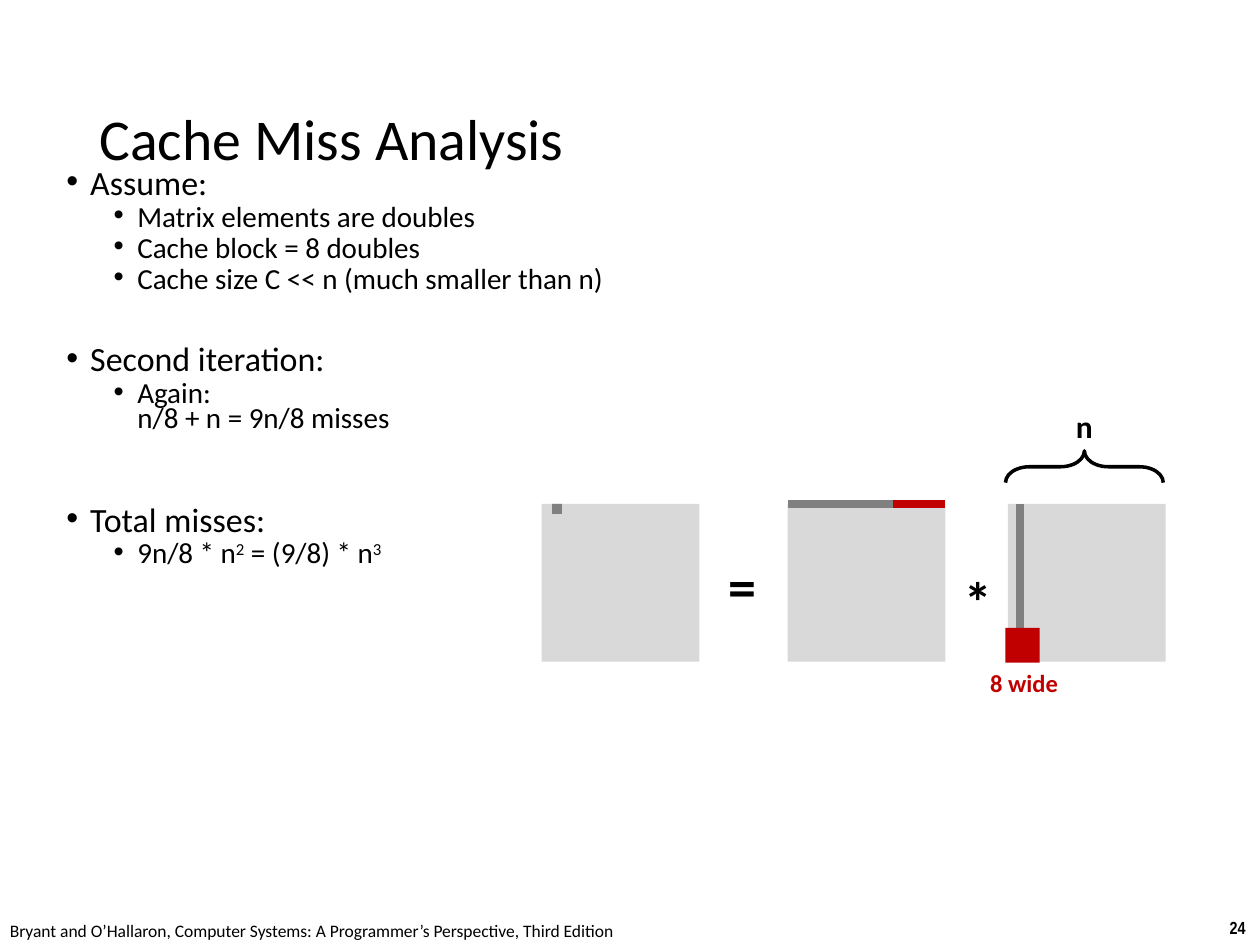
from dataclasses import dataclass

from lxml import etree
from pptx import Presentation
from pptx.dml.color import RGBColor
from pptx.enum.shapes import MSO_CONNECTOR, MSO_SHAPE
from pptx.enum.text import MSO_ANCHOR, MSO_AUTO_SIZE, PP_ALIGN
from pptx.oxml.ns import qn
from pptx.util import Cm, Pt

RECTANGLE = MSO_SHAPE.RECTANGLE
LEFT_BRACE = MSO_SHAPE.LEFT_BRACE
STRAIGHT = MSO_CONNECTOR.STRAIGHT
FIT_SHAPE = MSO_AUTO_SIZE.SHAPE_TO_FIT_TEXT
NO_FIT = MSO_AUTO_SIZE.NONE
MIDDLE = MSO_ANCHOR.MIDDLE
LEFT = PP_ALIGN.LEFT

COLORS = {"text": "000000", "matrix": "D9D9D9", "used": "808080", "cached": "C00000"}
FONT = "Calibri"
SIDE = 3.18
TOP = 10.16
RESULT_X, ROW_X, COLUMN_X = 10.92, 15.88, 20.32
COLUMN_LINE_X = 20.57
LEVEL_SIZES = (19.4, 16.6)
LEVEL_SPACING = (7.5, 3.8)
LEVEL_INDENTS = (0.48, 1.43)


@dataclass
class Bullet:
    text: str
    level: int = 1
    space_before: float | None = None


@dataclass
class Label:
    text: str
    left: float
    top: float
    width: float
    height: float
    size: float
    color: str = "text"
    bold: bool = True
    font: str = FONT


@dataclass
class Block:
    left: float
    top: float
    width: float
    height: float
    color: str


@dataclass
class Stripe:
    x1: float
    y1: float
    x2: float
    y2: float
    color: str


BULLETS = [
    Bullet("Assume:", 0),
    Bullet("Matrix elements are doubles"),
    Bullet("Cache block = 8 doubles"),
    Bullet("Cache size C << n (much smaller than n)"),
    Bullet("Second iteration:", 0, 31.5),
    Bullet("Again:\vn/8 + n = 9n/8 misses"),
    Bullet("Total misses:", 0, 43.5),
    Bullet("9n/8 * n^2^ = (9/8) * n^3"),
]
MATRICES = [Block(x, TOP, SIDE, SIDE, "matrix") for x in (RESULT_X, ROW_X, COLUMN_X)]
STRIPES = [
    Stripe(ROW_X, TOP, ROW_X + SIDE, TOP, "used"),
    Stripe(COLUMN_LINE_X, TOP, COLUMN_LINE_X, TOP + SIDE, "used"),
    Stripe(ROW_X + SIDE * 2 / 3, TOP, ROW_X + SIDE, TOP, "cached"),
]
CACHE_BLOCKS = [
    Block(11.13, TOP, 0.2, 0.2, "used"),
    Block(20.27, 12.66, 0.69, 0.7, "cached"),
]
LABELS = [
    Label("24", 24.54, 18.36, 0.86, 0.69, 10, font="Arial Narrow"),
    Label(
        "Bryant and O’Hallaron, Computer Systems: A Programmer’s Perspective, Third Edition",
        -0.05, 18.42, 12.9, 0.69, 10, bold=False,
    ),
    Label("n", 21.44, 8.08, 0.86, 1.02, 18),
    Label("*", 19.18, 11.3, 1.09, 1.63, 32),
    Label("=", 14.43, 11, 1.09, 1.63, 32),
    Label("8 wide", 19.71, 13.34, 1.88, 0.86, 14, "cached"),
]


def rgb(name: str) -> RGBColor:
    return RGBColor.from_string(COLORS[name])


def style_font(paragraph, size: float, color: str = "text", bold: bool = False, font: str = FONT) -> None:
    paragraph.font.name = font
    paragraph.font.size = Pt(size)
    paragraph.font.bold = bold
    paragraph.font.color.rgb = rgb(color)


def add_title(slide, text: str) -> None:
    title = slide.shapes.title
    title.left, title.top, title.width, title.height = Cm(1.75), Cm(1.02), Cm(21.9), Cm(3.68)
    frame = title.text_frame
    frame.text = text
    frame.auto_size = NO_FIT
    frame.vertical_anchor = MIDDLE
    heading = frame.paragraphs[0]
    heading.alignment = LEFT
    heading.line_spacing = 0.9
    style_font(heading, 33)


def add_bullet(paragraph, bullet: Bullet) -> None:
    level = bullet.level
    paragraph.level = level
    paragraph.line_spacing = 0.7
    spacing = bullet.space_before
    paragraph.space_before = Pt(LEVEL_SPACING[level] if spacing is None else spacing)
    style_font(paragraph, LEVEL_SIZES[level])
    properties = paragraph._p.get_or_add_pPr()
    properties.set("marL", str(Cm(LEVEL_INDENTS[level])))
    properties.set("indent", str(-Cm(LEVEL_INDENTS[0])))
    marker_font = etree.Element(qn("a:buFont"), typeface="Arial")
    marker = etree.Element(qn("a:buChar"), char="•")
    defaults = properties.find(qn("a:defRPr"))
    defaults.addprevious(marker_font)
    defaults.addprevious(marker)
    for line_index, line in enumerate(bullet.text.split("\v")):
        if line_index:
            paragraph.add_line_break()
        for part_index, part in enumerate(line.split("^")):
            run = paragraph.add_run()
            run.text = part
            if part_index % 2:
                run.font._element.set("baseline", "30000")


def add_bullets(slide, bullets: list[Bullet]) -> None:
    body = slide.shapes.add_textbox(Cm(1.09), Cm(3.35), Cm(21.95), Cm(8.48))
    frame = body.text_frame
    frame.word_wrap = True
    for index, bullet in enumerate(bullets):
        add_bullet(frame.add_paragraph() if index else frame.paragraphs[0], bullet)


def add_label(slide, label: Label) -> None:
    box = slide.shapes.add_textbox(Cm(label.left), Cm(label.top), Cm(label.width), Cm(label.height))
    frame = box.text_frame
    frame.word_wrap = False
    frame.auto_size = FIT_SHAPE
    frame.text = label.text
    style_font(frame.paragraphs[0], label.size, label.color, label.bold, label.font)


def add_block(slide, block: Block) -> None:
    rectangle = slide.shapes.add_shape(
        RECTANGLE, Cm(block.left), Cm(block.top), Cm(block.width), Cm(block.height)
    )
    rectangle.shadow.inherit = False
    rectangle.fill.solid()
    rectangle.fill.fore_color.rgb = rgb(block.color)
    rectangle.line.fill.background()


def add_stripe(slide, stripe: Stripe) -> None:
    line = slide.shapes.add_connector(
        STRAIGHT, Cm(stripe.x1), Cm(stripe.y1), Cm(stripe.x2), Cm(stripe.y2)
    )
    line.line.color.rgb = rgb(stripe.color)
    line.line.width = Pt(4.5)
    etree.SubElement(line._element.spPr, qn("a:effectLst"))


def add_width_brace(slide) -> None:
    brace = slide.shapes.add_shape(LEFT_BRACE, Cm(21.54), Cm(7.82), Cm(0.64), Cm(SIDE))
    brace.rotation = 90
    brace.adjustments[0] = 0.75
    brace.shadow.inherit = False
    brace.fill.background()
    brace.line.color.rgb = rgb("text")
    brace.line.width = Pt(2)


def main() -> None:
    presentation = Presentation()
    presentation.slide_width, presentation.slide_height = Cm(25.4), Cm(19.05)
    slide = presentation.slides.add_slide(presentation.slide_layouts[5])
    add_title(slide, "Cache Miss Analysis")
    add_bullets(slide, BULLETS)
    add_width_brace(slide)
    for matrix in MATRICES:
        add_block(slide, matrix)
    for stripe in STRIPES:
        add_stripe(slide, stripe)
    for block in CACHE_BLOCKS:
        add_block(slide, block)
    for label in LABELS:
        add_label(slide, label)
    presentation.save("out.pptx")


if __name__ == "__main__":
    main()
